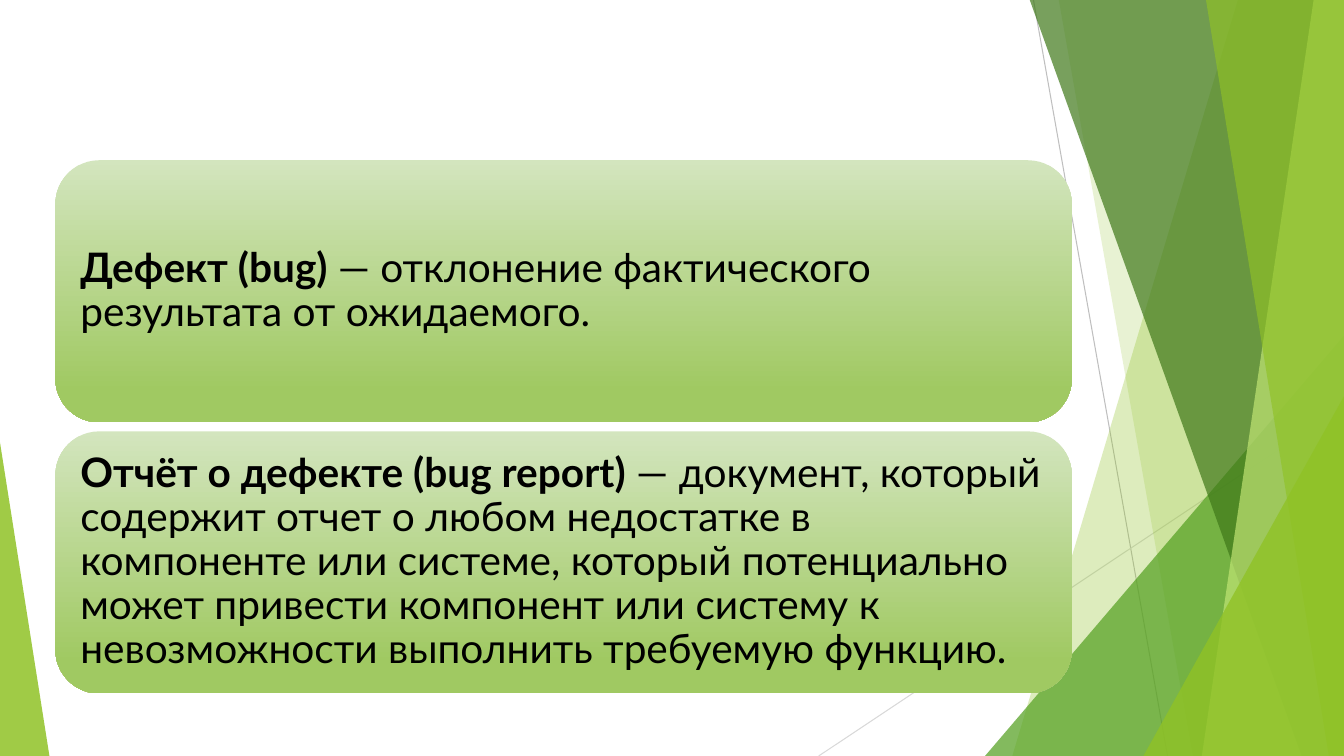
from dataclasses import dataclass
from lxml import etree
from pptx import Presentation
from pptx.dml.color import RGBColor
from pptx.enum import shapes as kinds, text as txt
from pptx.oxml import ns
from pptx.util import Inches, Pt

WIDE, HIGH = 13.33, 7.5
TOP = -0.01


@dataclass
class Ray:
    start: tuple[float, float]
    end: tuple[float, float]
    color: str


@dataclass
class Band:
    """Strip that runs from its slanted left edge to the slide's right side."""
    top: float
    foot: float
    color: str
    alpha: int


@dataclass
class Wedge:
    left: float
    top: float
    width: float
    apex: float
    color: str
    alpha: int


@dataclass
class Card:
    term: str
    meaning: str


DECOR = [
    Ray((10.25, 0), (11.58, HIGH), "BFBFBF"),
    Ray((WIDE, 4.03), (8.12, HIGH), "D9D9D9"),
    Band(12.28, 10.04, "90C226", 30),
    Band(10.5, 11.83, "90C226", 20),
    Wedge(9.77, 3.33, 3.56, 1, "54A021", 72),
    Band(10.21, 12.91, "3F7819", 70),
    Band(13.03, 11.92, "C0E474", 70),
    Band(11.96, 13.18, "90C226", 65),
    Wedge(11.34, 3.93, 1.99, 1, "90C226", 80),
    Wedge(0, 4.39, 0.49, 0, "90C226", 85),
]
CARDS = [
    Card("Дефект (bug) ", "— отклонение фактического результата от ожидаемого."),
    Card("Отчёт о дефекте (bug report) ",
         "— документ, который содержит отчет о любом недостатке в компоненте "
         "или системе, который потенциально может привести компонент или "
         "систему к невозможности выполнить требуемую функцию."),
]


def rgb(code: str) -> RGBColor:
    return RGBColor.from_string(code)


def paint(shape, color: str, alpha: int) -> None:
    shape.shadow.inherit = False
    shape.line.fill.background()
    shape.fill.solid()
    shape.fill.fore_color.rgb = rgb(color)
    tone = shape.fill._xPr.find(".//" + ns.qn("a:srgbClr"))
    etree.SubElement(tone, ns.qn("a:alpha"), val=str(alpha * 1000))


def draw_ray(slide, ray: Ray) -> None:
    ends = [Inches(v) for v in (*ray.start, *ray.end)]
    line = slide.shapes.add_connector(kinds.MSO_CONNECTOR.STRAIGHT, *ends)
    line.line.color.rgb = rgb(ray.color)
    line.line.width = Pt(0.75)
    etree.SubElement(line._element.spPr, ns.qn("a:effectLst"))


def draw_band(slide, band: Band) -> None:
    spots = [(band.top, TOP), (WIDE, TOP), (WIDE, HIGH), (band.foot, HIGH)]
    first, *rest = [(Inches(x), Inches(y)) for x, y in spots]
    path = slide.shapes.build_freeform(*first)
    path.add_line_segments(rest, close=True)
    paint(path.convert_to_shape(), band.color, band.alpha)


def draw_wedge(slide, wedge: Wedge) -> None:
    shape = slide.shapes.add_shape(
        kinds.MSO_SHAPE.ISOSCELES_TRIANGLE, Inches(wedge.left), Inches(wedge.top),
        Inches(wedge.width), Inches(HIGH - wedge.top))
    shape.adjustments[0] = wedge.apex
    paint(shape, wedge.color, wedge.alpha)


def draw_card(slide, card: Card, top: float) -> None:
    shape = slide.shapes.add_shape(
        kinds.MSO_SHAPE.ROUNDED_RECTANGLE, Inches(0.55), Inches(top),
        Inches(10.08), Inches(2.6))
    shape.shadow.inherit = False
    shape.line.fill.background()
    shape.fill.gradient()
    shape.fill.gradient_angle = 270
    shades = [(0, "D3E5BE"), (0.88, "A0C962")]
    for stop, (place, color) in zip(shape.fill.gradient_stops, shades):
        stop.position = place
        stop.color.rgb = rgb(color)

    frame = shape.text_frame
    frame.word_wrap = True
    frame.vertical_anchor = txt.MSO_ANCHOR.MIDDLE
    frame.margin_left = frame.margin_right = Inches(0.12)
    frame.margin_top = frame.margin_bottom = Inches(0.12)
    para = frame.paragraphs[0]
    para.alignment = txt.PP_ALIGN.LEFT
    para.line_spacing = 0.9
    para.font.name = "Lato"
    para.font.size = Pt(29)
    para.font.color.rgb = rgb("000000")
    for words, bold in ((card.term, True), (card.meaning, False)):
        run = para.add_run()
        run.text = words
        run.font.bold = bold


def main() -> None:
    deck = Presentation()
    deck.slide_width, deck.slide_height = Inches(WIDE), Inches(HIGH)
    slide = deck.slides.add_slide(deck.slide_layouts[6])
    pens = {Ray: draw_ray, Band: draw_band, Wedge: draw_wedge}
    for part in DECOR:
        pens[type(part)](slide, part)
    for i, card in enumerate(CARDS):
        draw_card(slide, card, 1.59 + 2.69 * i)
    deck.save("out.pptx")


if __name__ == "__main__":
    main()
